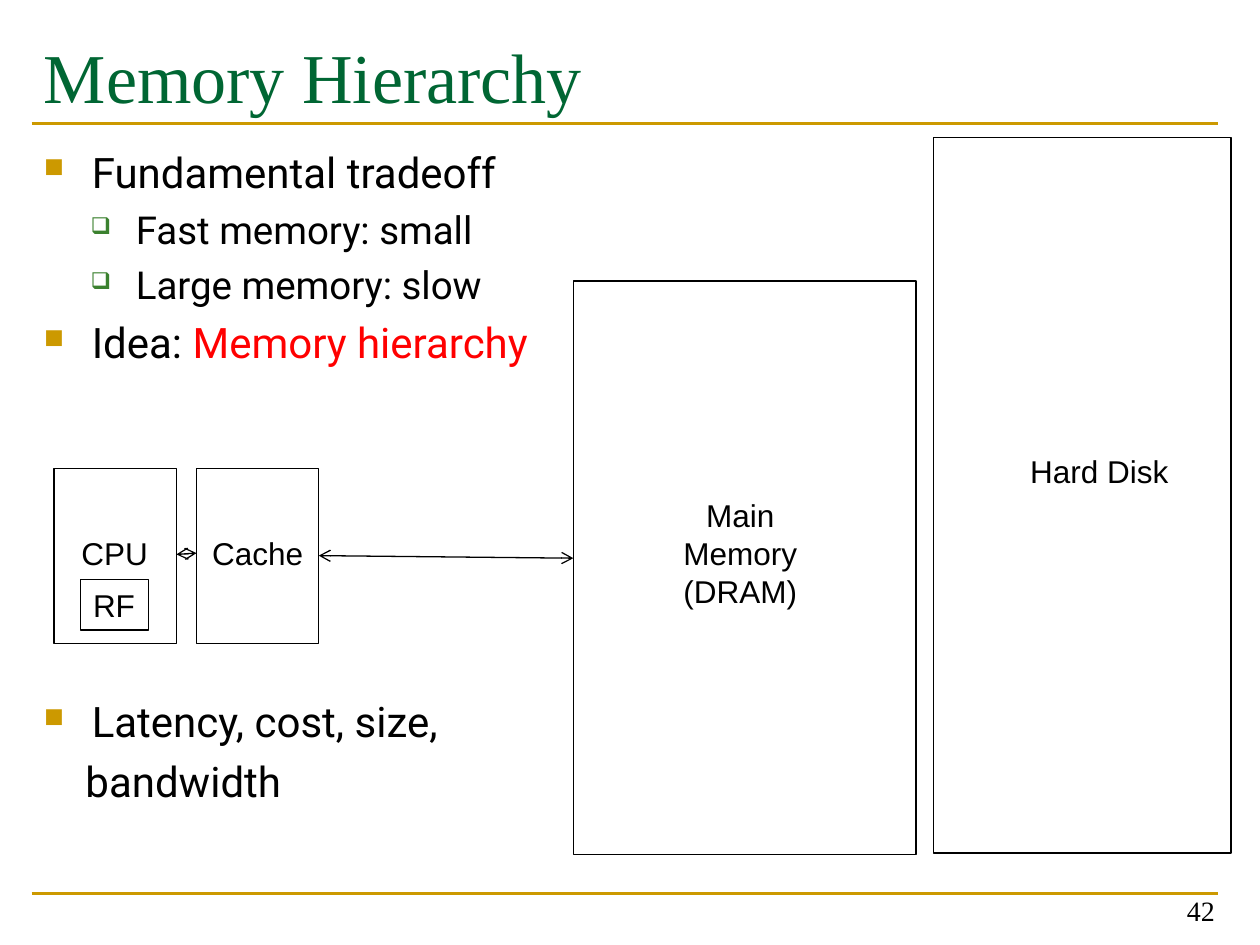
from lxml import etree
from pptx import Presentation
from pptx.dml.color import RGBColor
from pptx.enum.shapes import MSO_CONNECTOR as Connector, MSO_SHAPE as Shape
from pptx.enum.text import MSO_ANCHOR as Anchor, PP_ALIGN as Align
from pptx.oxml.ns import qn
from pptx.util import Inches, Pt

BLACK, GOLD, GREEN, RED = "000000", "CC9900", "006633", "FF0000"

prs = Presentation()
prs.slide_width, prs.slide_height = Inches(10), Inches(7.5)
slide = prs.slides.add_slide(prs.slide_layouts[6])
shapes = slide.shapes


def write(box, paragraphs, size=18, font="Arial", align=Align.LEFT,
          anchor=Anchor.TOP, wrap=True, top_inset=0.05):
    """Fill a shape; each paragraph is a list of (text, colour, size) runs."""
    frame = box.text_frame
    frame.word_wrap, frame.vertical_anchor = wrap, anchor
    frame.margin_left = frame.margin_right = Inches(0.1)
    frame.margin_top, frame.margin_bottom = Inches(top_inset), Inches(0.05)
    for i, runs in enumerate(paragraphs):
        par = frame.paragraphs[0] if i == 0 else frame.add_paragraph()
        par.alignment = align
        for text, color, run_size in runs:
            run = par.add_run()
            run.text = text
            run.font.name, run.font.size = font, Pt(run_size or size)
            run.font.color.rgb = RGBColor.from_string(color)
    return frame.paragraphs


def draw_line(start, end, color, width, arrows=False):
    line = shapes.add_connector(Connector.STRAIGHT, *map(Inches, start + end))
    line.line.color.rgb = RGBColor.from_string(color)
    line.line.width = Pt(width)
    if arrows:
        for end_tag in ("a:headEnd", "a:tailEnd"):
            etree.SubElement(line.line._get_or_add_ln(), qn(end_tag), type="arrow")
    etree.SubElement(line._element.spPr, qn("a:effectLst"))


# Rules above and below the content
for y in (7.09, 0.98):
    draw_line((0.25, y), (9.67, y), GOLD, 1.5)

# Title and page number
title = shapes.add_textbox(*map(Inches, (0.25, 0.17, 9.42, 0.8)))
write(title, [[("Memory Hierarchy", GREEN, None)]], size=40,
      font="Times New Roman", top_inset=0.1)
page_number = shapes.add_textbox(*map(Inches, (7.41, 6.91, 2.33, 0.5)))
write(page_number, [[("42", BLACK, None)]], size=16, font="Times New Roman",
      align=Align.RIGHT, anchor=Anchor.BOTTOM)

# Bullet levels: left margin, hanging indent, size, bullet, its colour and percent
LEVELS = {
    "main": (0.38, -0.38, 24, "■", GOLD, 65),
    "sub": (0.73, -0.36, 22, "❑", "3B812F", 60),
    "continued": (0.33, 0, 24, None, None, None),
}
bullet_blocks = [
    (1.09, 2.0, [
        ("main", [("Fundamental tradeoff", BLACK)]),
        ("sub", [("Fast memory: small", BLACK)]),
        ("sub", [("Large memory: slow", BLACK)]),
        ("main", [("Idea: ", BLACK), ("Memory hierarchy", RED)]),
    ]),
    (5.45, 1.1, [
        ("main", [("Latency, cost, size,", BLACK)]),
        ("continued", [("bandwidth", BLACK)]),
    ]),
]
for top, height, items in bullet_blocks:
    block = shapes.add_textbox(*map(Inches, (0.25, top, 4.25, height)))
    pars = write(block, [[(text, color, LEVELS[level][2]) for text, color in runs]
                         for level, runs in items], font="Roboto", top_inset=0.07)
    for i, (par, (level, _)) in enumerate(zip(pars, items)):
        margin, indent, size, bullet, color, percent = LEVELS[level]
        par.space_before = Pt(size * 0.234 if i else 0)
        props = par._p.get_or_add_pPr()
        props.set("marL", str(Inches(margin)))
        props.set("indent", str(Inches(indent)))
        if bullet:
            bullet_color = etree.SubElement(props, qn("a:buClr"))
            etree.SubElement(bullet_color, qn("a:srgbClr"), val=color)
            etree.SubElement(props, qn("a:buSzPct"), val=str(percent * 1000))
            etree.SubElement(props, qn("a:buChar"), char=bullet)

# Memory levels: CPU, main memory, register file, cache, hard disk
cpu, main_memory, register_file, cache, hard_disk = [
    shapes.add_shape(Shape.RECTANGLE, *map(Inches, place)) for place in (
        (0.43, 3.72, 0.97, 1.39),
        (4.55, 2.23, 2.72, 4.55),
        (0.64, 4.6, 0.54, 0.4),
        (1.56, 3.72, 0.97, 1.39),
        (7.41, 1.09, 2.36, 5.68),
    )]
for level in (cpu, main_memory, register_file, cache, hard_disk):
    level.shadow.inherit = False
    level.fill.background()
    level.line.color.rgb = RGBColor.from_string(BLACK)
    level.line.width = Pt(0.75)
write(register_file, [[("RF", BLACK, None)]], wrap=False)

# Labels of the levels
for lines, place, wrap in (
    (["CPU"], (0.54, 4.19, 0.74, 0.4), False),
    (["Main", "Memory", "(DRAM)"], (5.32, 3.89, 1.11, 1.0), False),
    (["Cache"], (1.56, 4.19, 0.97, 0.4), True),
    (["Hard Disk"], (8.07, 3.54, 1.31, 0.4), True),
):
    label = shapes.add_textbox(*map(Inches, place))
    write(label, [[(text, BLACK, None)] for text in lines],
          align=Align.CENTER, wrap=wrap)

# Data paths between the levels
draw_line((4.55, 4.43), (2.53, 4.41), BLACK, 0.75, arrows=True)
draw_line((1.56, 4.39), (1.4, 4.4), BLACK, 0.75, arrows=True)

prs.save("out.pptx")
